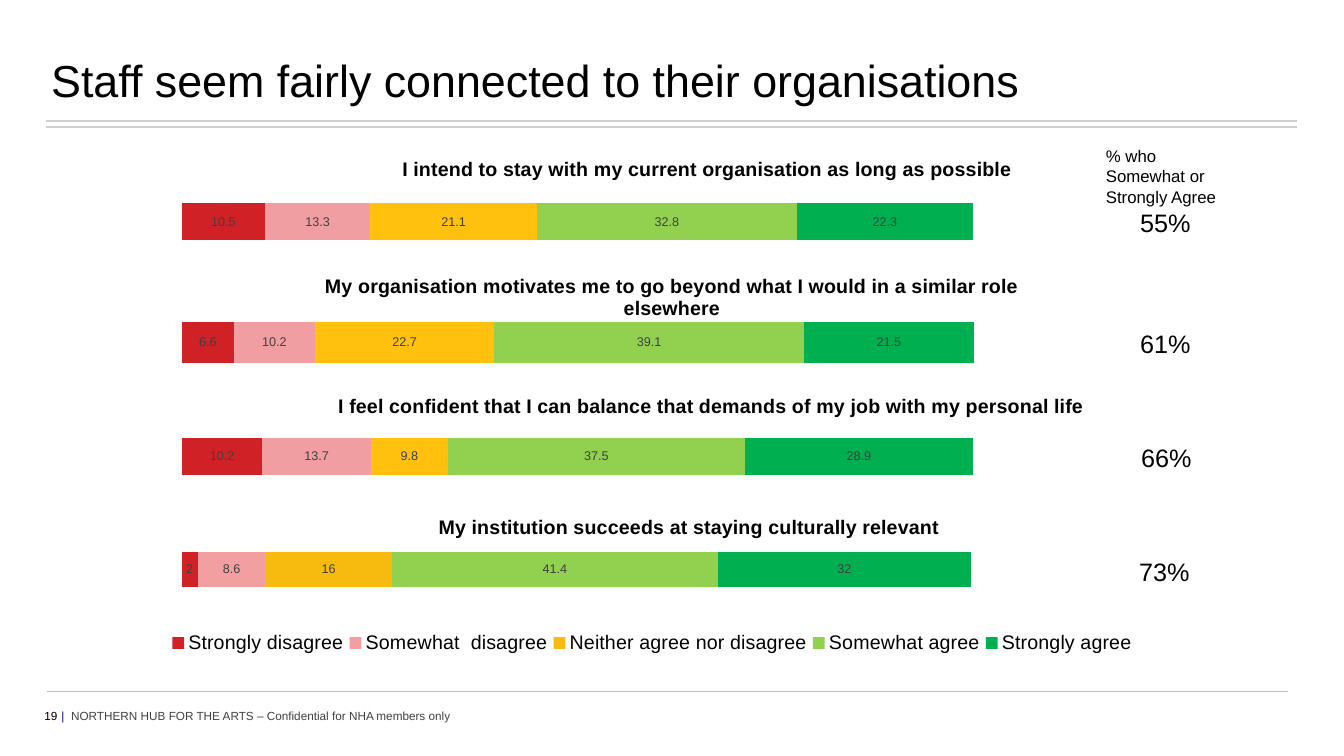
from pptx import Presentation
from pptx.chart.data import CategoryChartData
from pptx.dml.color import RGBColor
from pptx.enum.chart import XL_CHART_TYPE, XL_LABEL_POSITION, XL_LEGEND_POSITION
from pptx.enum.shapes import MSO_CONNECTOR
from pptx.enum.text import MSO_ANCHOR, PP_ALIGN
from pptx.oxml.ns import qn
from pptx.util import Inches, Pt
from lxml.etree import SubElement

BLACK = RGBColor(0x00, 0x00, 0x00)
GREY = RGBColor(0x41, 0x41, 0x41)
LABEL = RGBColor(0x40, 0x40, 0x40)
NAVY = RGBColor(0x00, 0x00, 0x90)
HEADER_RULE = RGBColor(0xD0, 0xCE, 0xCE)
FOOTER_RULE = RGBColor(0xBF, 0xBF, 0xBF)
RED = RGBColor(0xD0, 0x21, 0x27)
PINK = RGBColor(0xF0, 0x9E, 0xA1)
AMBER = RGBColor(0xFF, 0xC1, 0x0D)
LIGHT_GREEN = RGBColor(0x92, 0xD0, 0x50)
GREEN = RGBColor(0x00, 0xB0, 0x50)
SCALE_COLORS = [RED, PINK, AMBER, LIGHT_GREEN, GREEN]
LEGEND_COLORS = [RED, RGBColor(0xF1, 0x9F, 0xA0), RGBColor(0xF7, 0xBB, 0x0F),
                 LIGHT_GREEN, GREEN]

SERIES = [f"Series {n}" for n in range(1, 6)]
ANSWERS = ["Strongly disagree", "Somewhat  disagree", "Neither agree nor disagree",
           "Somewhat agree", "Strongly agree"]

# Statement, values, chart box, plot shares, title corner shares, agreement, its corner
ROWS = [
    ("I intend to stay with my current organisation as long as possible",
     [10.5, 13.3, 21.1, 32.8, 22.3], (1.65, 1.19, 9.61, 1.62),
     (0.016, 0.343, 0.98, 0.563), (0.24, 0.2), "55%", (11.21, 2.01)),
    ("My organisation motivates me to go beyond what I would in a similar role elsewhere",
     [6.6, 10.2, 22.7, 39.1, 21.5], (1.65, 2.33, 9.61, 1.73),
     (0.016, 0.322, 0.98, 0.59), (0.16, 0.2), "61%", (11.21, 3.21)),
    ("I feel confident that I can balance that demands of my job with my personal life",
     [10.2, 13.7, 9.8, 37.5, 28.9], (1.57, 3.6, 9.72, 1.87),
     (0.024, 0.252, 0.968, 0.488), (0.18, 0.14), "66%", (11.22, 4.34)),
    ("My institution succeeds at staying culturally relevant",
     [2, 8.6, 16, 41.4, 32], (1.65, 4.67, 10.25, 2),
     (0.015, 0.278, 0.916, 0.425), (0.26, 0.2), "73%", (11.2, 5.47)),
]


def set_font(font, size, color=BLACK, bold=False):
    font.name, font.size, font.bold = "Arial", Pt(size), bold
    font.color.rgb = color


def add_text(s, box, text, size, inset=None, color=BLACK):
    tf = s.shapes.add_textbox(*map(Inches, box)).text_frame
    tf.word_wrap = True
    if inset is not None:
        tf.margin_left = tf.margin_right = Inches(inset)
        tf.margin_top = tf.margin_bottom = Inches(inset)
    p = tf.paragraphs[0]
    p.text = text
    set_font(p.font, size, color)
    return tf


def add_rule(s, left, top, width, color, weight):
    line = s.shapes.add_connector(MSO_CONNECTOR.STRAIGHT, Inches(left), Inches(top),
                                  Inches(left + width), Inches(top))
    line.line.color.rgb = color
    line.line.width = Pt(weight)
    SubElement(line._element.spPr, qn("a:effectLst"))


def set_layout(parent, index, shares, inner=False):
    """Fix a chart part at shares (x, y, w, h) of the chart."""
    for old in parent.findall(qn("c:layout")):
        parent.remove(old)
    layout = parent.makeelement(qn("c:layout"))
    parent.insert(index, layout)
    manual = SubElement(layout, qn("c:manualLayout"))
    if inner:
        SubElement(manual, qn("c:layoutTarget")).set("val", "inner")
    for mode in ("xMode", "yMode"):
        SubElement(manual, qn(f"c:{mode}")).set("val", "edge")
    for name, share in zip("xywh", shares):
        SubElement(manual, qn(f"c:{name}")).set("val", str(share))


def add_header(s, left, top, width):
    tf = add_text(s, (left, top, width, 0.63),
                  "Staff seem fairly connected to their organisations", 32)
    tf.vertical_anchor = MSO_ANCHOR.MIDDLE
    tf.paragraphs[0].line_spacing = 0.9
    for offset in (0.69, 0.75):
        add_rule(s, left + 0.05, top + offset, 12.4, HEADER_RULE, 1)


def add_footer(s, left, top):
    add_rule(s, left + 0.06, top - 0.14, 12.3, FOOTER_RULE, 0.75)
    add_text(s, (left, top, 0.43, 0.21), "19", 8.4, 0.03)
    tf = add_text(s, (left + 0.17, top, 4.68, 0.21), "|  ", 8.4, 0.03, NAVY)
    r = tf.paragraphs[0].add_run()
    r.text = "NORTHERN HUB FOR THE ARTS – Confidential for NHA members only"
    r.font.color.rgb = GREY


def add_statement_chart(s, box, statement, values, plot_shares, title_shares, legend):
    data = CategoryChartData()
    data.categories = ["1"]
    for name, value in zip(ANSWERS if legend else SERIES, values):
        data.add_series(name, [value])
    chart = s.shapes.add_chart(XL_CHART_TYPE.BAR_STACKED, *map(Inches, box), data).chart
    set_font(chart.font, 10)

    # Statement above the bar
    chart.has_title = True
    p = chart.chart_title.text_frame.paragraphs[0]
    p.text = statement
    p.alignment = PP_ALIGN.CENTER
    set_font(p.font, 14, bold=True)
    set_layout(chart.chart_title._element, 1, title_shares)

    # Hidden axes and the plot
    for axis in (chart.category_axis, chart.value_axis):
        axis.has_major_gridlines = False
        axis.visible = False
    chart.value_axis.minimum_scale, chart.value_axis.maximum_scale = 0, 120
    set_layout(chart.element.find(f".//{qn('c:plotArea')}"), 0, plot_shares, inner=True)

    # Coloured segments with their values
    plot = chart.plots[0]
    plot.gap_width, plot.overlap, plot.vary_by_categories = 150, 100, False
    for series, color in zip(plot.series, LEGEND_COLORS if legend else SCALE_COLORS):
        series.format.fill.solid()
        series.format.fill.fore_color.rgb = color
        labels = series.data_labels
        labels.show_value = True
        labels.position = XL_LABEL_POSITION.CENTER
        set_font(labels.font, 9, LABEL)

    chart.has_legend = legend
    if legend:
        chart.legend.position = XL_LEGEND_POSITION.BOTTOM
        chart.legend.include_in_layout = False
        set_font(chart.legend.font, 14)
        set_layout(chart.legend._element, 1, (0, 0.78, 0.94, 0.15))


def add_survey(s):
    for row in ROWS:
        statement, values, box, plot_shares, title_shares, agree, corner = row
        add_statement_chart(s, box, statement, values, plot_shares, title_shares,
                            legend=row is ROWS[-1])
        add_text(s, (*corner, 0.99, 0.4), agree, 18)
    add_text(s, (10.87, 1.4, 1.38, 0.5), "% who Somewhat or Strongly Agree", 12)


def main():
    prs = Presentation()
    prs.slide_width, prs.slide_height = Inches(13.33), Inches(7.5)
    s = prs.slides.add_slide(prs.slide_layouts[6])
    add_footer(s, 0.41, 7)
    add_header(s, 0.41, 0.51, 12.26)
    add_survey(s)
    prs.save("out.pptx")


if __name__ == "__main__":
    main()
